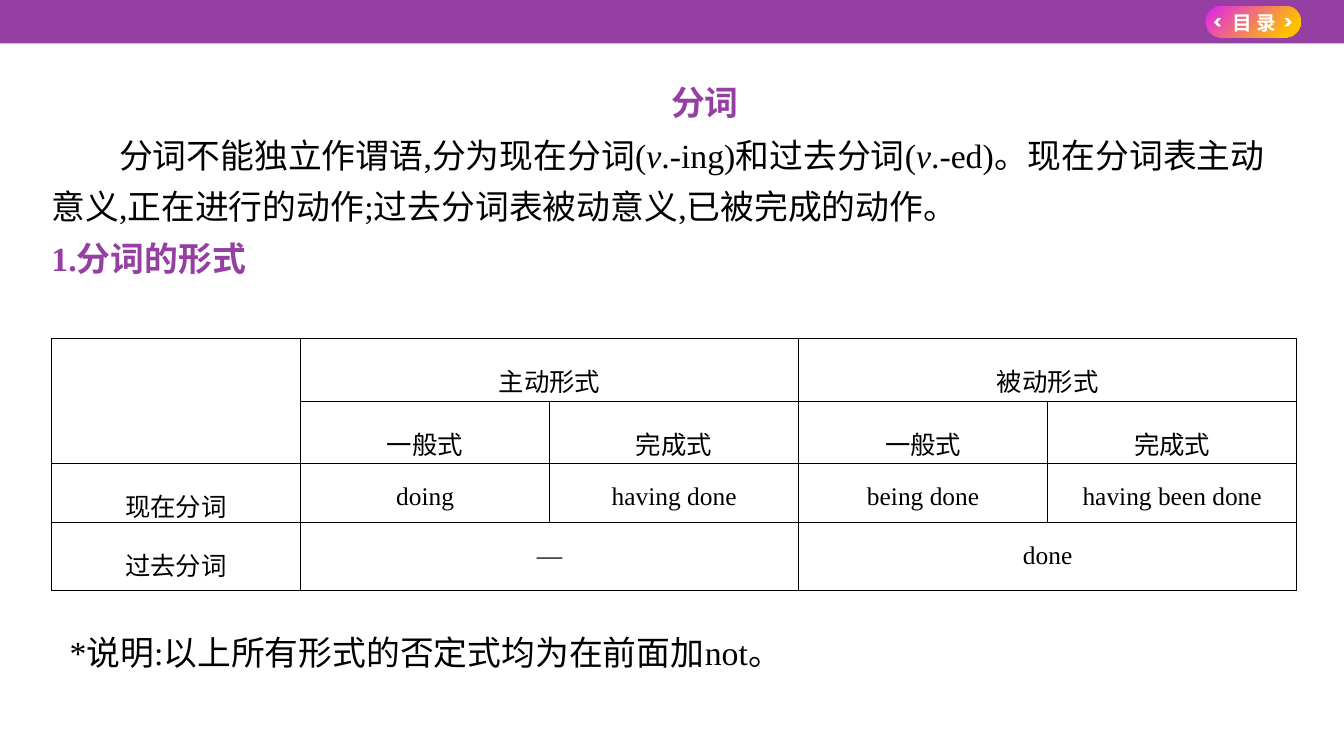
import pptx
import pptx.util
import pptx.dml.color
import pptx.enum.dml
import pptx.enum.lang
import pptx.enum.shapes
import pptx.enum.text
import pptx.oxml
import pptx.oxml.ns
from dataclasses import dataclass
from typing import Any

Inches = pptx.util.Inches
Pt = pptx.util.Pt
Align = pptx.enum.text.PP_ALIGN
Preset = pptx.enum.shapes.MSO_SHAPE


@dataclass(frozen=True)
class Theme:
    purple: str = "953FA3"
    magenta: str = "DE21F5"
    amber: str = "FFC000"
    white: str = "FFFFFF"
    black: str = "000000"
    serif: str = "Times New Roman"
    sans: str = "Noto Sans CJK SC"
    body_size: float = 24.1
    cell_size: float = 18.1
    button_size: float = 14
    body_spacing: float = 1.25
    cell_spacing: float = 1.5
    space_before: float = 1.4
    border: float = 0.75


THEME = Theme()


@dataclass(frozen=True)
class Style:
    size: float
    color: str = THEME.black
    bold: bool = False
    latin: str = THEME.serif


BODY = Style(THEME.body_size)
HEADING = Style(THEME.body_size, THEME.purple, True)
CELL = Style(THEME.cell_size)
BUTTON = Style(THEME.button_size, THEME.white, True, THEME.sans)


@dataclass(frozen=True)
class Box:
    left: float
    top: float
    width: float
    height: float

    def lengths(self) -> list[int]:
        return [Inches(v) for v in (self.left, self.top, self.width, self.height)]


@dataclass(frozen=True)
class Span:
    text: str
    italic: bool = False


@dataclass(frozen=True)
class Para:
    spans: tuple[Span, ...]
    style: Style = BODY
    align: Any = Align.LEFT
    indent: float = 0


@dataclass(frozen=True)
class Entry:
    row: int
    column: int
    text: str
    rows: int = 1
    columns: int = 1


LESSON = (
    Para((Span("分词"),), HEADING, Align.CENTER),
    Para((
        Span("分词不能独立作谓语,分为现在分词("),
        Span("v", True),
        Span(".-ing)和过去分词("),
        Span("v", True),
        Span(".-ed)。现在分词表主动\n意义,正在进行的动作;过去分词表被动意义,已被完成的动作。"),
    ), indent=0.67),
    Para((Span("1.分词的形式"),), HEADING),
)
NOTE = (Para((Span("*说明:以上所有形式的否定式均为在前面加not。"),)),)

COLUMN_COUNT = 5
ROW_HEIGHTS = (0.62, 0.62, 0.58, 0.67)
ENTRIES = (
    Entry(0, 0, "", rows=2),
    Entry(0, 1, "主动形式", columns=2),
    Entry(0, 3, "被动形式", columns=2),
    Entry(1, 1, "一般式"),
    Entry(1, 2, "完成式"),
    Entry(1, 3, "一般式"),
    Entry(1, 4, "完成式"),
    Entry(2, 0, "现在分词"),
    Entry(2, 1, "doing"),
    Entry(2, 2, "having done"),
    Entry(2, 3, "being done"),
    Entry(2, 4, "having been done"),
    Entry(3, 0, "过去分词"),
    Entry(3, 1, "—", columns=2),
    Entry(3, 3, "done", columns=2),
)


def rgb(color: str) -> Any:
    return pptx.dml.color.RGBColor.from_string(color)


def add_span(paragraph: Any, span: Span, style: Style) -> None:
    for index, line in enumerate(span.text.split("\n")):
        if index:
            paragraph.add_line_break()
        run = paragraph.add_run()
        run.text = line
        font = run.font
        font.name, font.size = style.latin, Pt(style.size)
        font.bold, font.italic = style.bold, span.italic
        font.color.rgb = rgb(style.color)
        font.language_id = pptx.enum.lang.MSO_LANGUAGE_ID.SIMPLIFIED_CHINESE
        asian = pptx.oxml.parse_xml(
            f'<a:ea {pptx.oxml.ns.nsdecls("a")} typeface="{THEME.sans}"/>')
        font._element.find(pptx.oxml.ns.qn("a:latin")).addnext(asian)


def add_text(slide: Any, box: Box, paras: tuple[Para, ...], margin: float) -> None:
    frame = slide.shapes.add_textbox(*box.lengths()).text_frame
    frame.word_wrap = True
    frame.margin_left = frame.margin_right = Inches(margin)
    frame.margin_top = frame.margin_bottom = Inches(margin / 2)
    for index, para in enumerate(paras):
        paragraph = frame.add_paragraph() if index else frame.paragraphs[0]
        paragraph.alignment = para.align
        paragraph.line_spacing = THEME.body_spacing
        paragraph.space_before = Pt(THEME.space_before)
        paragraph._p.get_or_add_pPr().set("indent", str(Inches(para.indent)))
        for span in para.spans:
            add_span(paragraph, span, para.style)


def add_panel(slide: Any, preset: Any, box: Box, color: str, rotation: float = 0) -> Any:
    panel = slide.shapes.add_shape(preset, *box.lengths())
    panel.shadow.inherit = False
    panel.fill.solid()
    panel.fill.fore_color.rgb = rgb(color)
    panel.line.fill.background()
    panel.rotation = rotation
    return panel


def add_contents_button(slide: Any) -> None:
    button = add_panel(slide, Preset.FLOWCHART_TERMINATOR,
                       Box(11.94, 0.06, 0.94, 0.31), THEME.magenta)
    button.fill.gradient()
    button.fill.gradient_angle = 315
    start, end = button.fill.gradient_stops
    start.color.rgb, start.position = rgb(THEME.magenta), 0
    end.color.rgb, end.position = rgb(THEME.amber), 0.84

    label = slide.shapes.add_textbox(*Box(12.09, 0.05, 0.66, 0.34).lengths()).text_frame
    label.word_wrap = True
    label.vertical_anchor = pptx.enum.text.MSO_ANCHOR.MIDDLE
    label.paragraphs[0].alignment = Align.CENTER
    add_span(label.paragraphs[0], Span("目 录"), BUTTON)
    for left, rotation in ((12.72, 0), (12.02, 180)):
        add_panel(slide, Preset.CHEVRON, Box(left, 0.18, 0.07, 0.08), THEME.white, rotation)


def add_borders(cell: Any) -> None:
    properties = cell._tc.get_or_add_tcPr()
    for index, side in enumerate(("lnL", "lnR", "lnT", "lnB")):
        properties.insert(index, pptx.oxml.parse_xml(
            f'<a:{side} {pptx.oxml.ns.nsdecls("a")} w="{Pt(THEME.border)}"><a:solidFill>'
            f'<a:srgbClr val="{THEME.black}"/></a:solidFill></a:{side}>'))


def add_forms_table(slide: Any, box: Box) -> None:
    table = slide.shapes.add_table(len(ROW_HEIGHTS), COLUMN_COUNT, *box.lengths()).table
    table.first_row = table.horz_banding = False
    for row, height in zip(table.rows, ROW_HEIGHTS):
        row.height = Inches(height)
    for cell in table.iter_cells():
        cell.fill.background()
        add_borders(cell)
        cell.margin_left = cell.margin_right = Inches(0.05)
        cell.margin_top = cell.margin_bottom = Inches(0.05)
    for entry in ENTRIES:
        cell = table.cell(entry.row, entry.column)
        if entry.rows * entry.columns > 1:
            cell.merge(table.cell(entry.row + entry.rows - 1,
                                  entry.column + entry.columns - 1))
        if entry.text:
            paragraph = cell.text_frame.paragraphs[0]
            paragraph.alignment = Align.CENTER
            paragraph.line_spacing = THEME.cell_spacing
            add_span(paragraph, Span(entry.text), CELL)


def main() -> None:
    deck = pptx.Presentation()
    deck.slide_width = pptx.util.Cm(33.8)
    deck.slide_height = pptx.util.Cm(19)
    page = deck.slides.add_slide(deck.slide_layouts[6])
    # Top bar with the contents button
    add_panel(page, Preset.RECTANGLE, Box(0, 0, 13.31, 0.43), THEME.purple)
    add_contents_button(page)
    # Lesson text, table of forms and closing note
    add_text(page, Box(0.51, 0.71, 12.94, 2.46), LESSON, margin=0)
    add_forms_table(page, Box(0.51, 3.35, 12.33, 2.49))
    add_text(page, Box(0.59, 6.1, 7.32, 0.64), NOTE, margin=0.1)
    deck.save("out.pptx")


if __name__ == "__main__":
    main()
